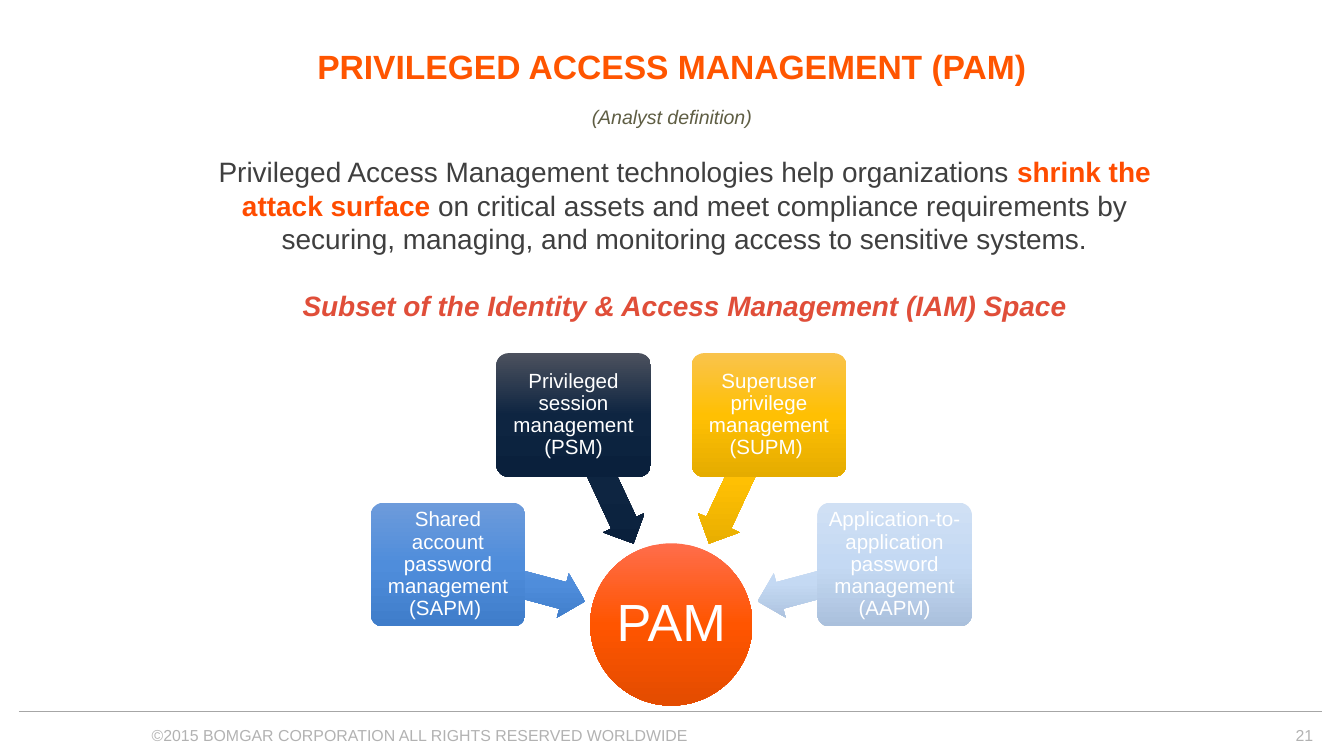
from copy import deepcopy
from math import cos, radians, sin

from lxml import etree
from pptx import Presentation
from pptx import util as u
from pptx.dml.color import RGBColor
from pptx.enum import shapes, text
from pptx.oxml.ns import qn

WIDTH = 10
HEIGHT = WIDTH * 9 / 16
FONT = "Arial"
WHITE = RGBColor(0xFF, 0xFF, 0xFF)
ORANGE = RGBColor(0xFF, 0x55, 0x00)
HOT_ORANGE = RGBColor(0xFF, 0x4C, 0x00)
RED = RGBColor(0xE0, 0x4E, 0x39)
OLIVE = RGBColor(0x5F, 0x5E, 0x44)
DARK_GREY = RGBColor(0x3F, 0x3F, 0x3F)
LIGHT_GREY = RGBColor(0xB2, 0xB2, 0xB2)
RULE_GREY = RGBColor(0xA6, 0xA6, 0xA6)

# Gradients: top, middle and bottom colour
HUB_SHADES = (RGBColor(0xFF, 0x6D, 0x4B), ORANGE, RGBColor(0xE3, 0x4C, 0x00))
BLUE_SHADES = (RGBColor(0x6D, 0x9B, 0xDB), RGBColor(0x4F, 0x8D, 0xDB), RGBColor(0x3F, 0x7D, 0xCA))
NAVY_SHADES = (RGBColor(0x4C, 0x51, 0x5E), RGBColor(0x0E, 0x25, 0x41), RGBColor(0x0A, 0x20, 0x3C))
GOLD_SHADES = (RGBColor(0xF9, 0xC3, 0x4C), RGBColor(0xFF, 0xC0, 0x03), RGBColor(0xE5, 0xAC, 0x00))
PALE_SHADES = (RGBColor(0xD0, 0xE0, 0xF4), RGBColor(0xC4, 0xD9, 0xF3), RGBColor(0xAA, 0xC0, 0xDC))

CARDS = [
    ("Shared account password management (SAPM) ", BLUE_SHADES),
    ("Privileged session management (PSM)", NAVY_SHADES),
    ("Superuser privilege management (SUPM) ", GOLD_SHADES),
    ("Application-to-application password management (AAPM)", PALE_SHADES),
]


def inches(*lengths):
    return [u.Inches(length) for length in lengths]


def set_margins(frame, left, top, right, bottom):
    frame.margin_left, frame.margin_top, frame.margin_right, frame.margin_bottom = inches(
        left, top, right, bottom)


def add_text(page, box, margins=(0.1, 0.05, 0.1, 0.05)):
    frame = page.shapes.add_textbox(*inches(*box)).text_frame
    frame.word_wrap = True
    set_margins(frame, *margins)
    return frame


def write(para, spans, size, align=text.PP_ALIGN.CENTER, spacing=0.9):
    """Fill a paragraph with spans of (words, colour, bold, italic)."""
    para.alignment = align
    para.line_spacing = spacing
    for words, color, bold, italic in spans:
        span = para.add_run()
        span.text = words
        font = span.font
        font.name, font.size = FONT, u.Pt(size)
        font.color.rgb, font.bold, font.italic = color, bold, italic


def add_shaded(page, kind, center, size, shades):
    """Add a shape around its centre, with a gradient from top to bottom."""
    left, top = center[0] - size[0] / 2, center[1] - size[1] / 2
    shape = page.shapes.add_shape(kind, *inches(left, top, *size))
    shape.shadow.inherit = False
    shape.line.fill.background()
    shape.fill.gradient()
    shape.fill.gradient_angle = 270
    gradient = shape._element.spPr.find(qn("a:gradFill"))
    gradient.set("rotWithShape", "0")
    stop_list = gradient.find(qn("a:gsLst"))
    stop_list.append(deepcopy(stop_list[0]))
    for index, (stop, shade) in enumerate(zip(shape.fill.gradient_stops, shades)):
        stop.position = index / 2
        stop.color.rgb = shade
    return shape


def label(shape, words, size):
    frame = shape.text_frame
    frame.word_wrap = True
    frame.vertical_anchor = text.MSO_ANCHOR.MIDDLE
    set_margins(frame, 0.02, 0.02, 0.02, 0.02)
    write(frame.paragraphs[0], [(words, WHITE, False, False)], size)


def add_heading(page, box):
    frame = add_text(page, box)
    write(frame.paragraphs[0], [("PRIVILEGED ACCESS MANAGEMENT (PAM)", ORANGE, True, False)], 18)
    para = frame.add_paragraph()
    para.space_before = u.Pt(11)
    write(para, [("(Analyst definition)", OLIVE, False, True)], 10.5)


def add_definition(page, box):
    frame = add_text(page, box, (0.26, 0.04, 0.07, 0.04))
    write(frame.paragraphs[0], [
        ("Privileged Access Management technologies help organizations ", DARK_GREY, False, False),
        ("shrink the attack surface", HOT_ORANGE, True, False),
        (" on critical assets and meet compliance requirements by securing, managing, "
         "and monitoring access to sensitive systems.", DARK_GREY, False, False),
    ], 15, spacing=1.0)
    para = frame.add_paragraph()
    para.space_before = u.Pt(18)
    write(para, [("Subset of the Identity & Access Management (IAM) Space", RED, True, True)],
          15, spacing=1.0)


def add_radial_diagram(page, box):
    left, top, width, height = box
    hub_size = 0.27 * width
    hub_center = (left + width / 2, top + height - hub_size / 2)

    def on_circle(radius, degrees):
        angle = radians(degrees)
        return hub_center[0] + radius * cos(angle), hub_center[1] + radius * sin(angle)

    # Hub
    hub = add_shaded(page, shapes.MSO_SHAPE.OVAL, hub_center, (hub_size, hub_size), HUB_SHADES)
    label(hub, "PAM", 28)

    # Cards on an arc, each with an arrow towards the hub
    for index, (words, shades) in enumerate(CARDS):
        degrees = 195 + 50 * index
        arrow = add_shaded(page, shapes.MSO_SHAPE.LEFT_ARROW, on_circle(1.19, degrees),
                           (1.05, 0.34), shades)
        arrow.adjustments[0], arrow.adjustments[1] = 0.6, 0.5
        arrow.rotation = degrees
        card = add_shaded(page, shapes.MSO_SHAPE.ROUNDED_RECTANGLE,
                          on_circle(1.72, degrees), (1.15, 0.92), shades)
        card.adjustments[0] = 0.1
        label(card, words, 11)


def add_footer(page, box):
    left, top, width, height = box
    rule = page.shapes.add_connector(shapes.MSO_CONNECTOR.STRAIGHT,
                                     *inches(left, top, left + width, top))
    rule.line.color.rgb = RULE_GREY
    rule.line.width = u.Pt(0.25)
    etree.SubElement(rule._element.spPr, qn("a:effectLst"))

    notice = add_text(page, (1.03, top, 6.93, height))
    write(notice.paragraphs[0],
          [("©2015 BOMGAR CORPORATION ALL RIGHTS RESERVED WORLDWIDE", LIGHT_GREY, False, False)],
          8.5, text.PP_ALIGN.LEFT, 1.4)
    number = add_text(page, (6.17, top, 3.7, height))
    write(number.paragraphs[0], [("21", LIGHT_GREY, False, False)],
          8.5, text.PP_ALIGN.RIGHT, 1.4)


def main():
    deck = Presentation()
    deck.slide_width, deck.slide_height = inches(WIDTH, HEIGHT)
    page = deck.slides.add_slide(deck.slide_layouts[6])
    add_footer(page, (0.14, 5.29, 9.7, 0.29))
    add_heading(page, (0.5, 0.33, 9, 0.5))
    add_radial_diagram(page, (2.76, 2.63, 4.47, 2.62))
    add_definition(page, (1.25, 1.11, 7.5, 1.34))
    deck.save("out.pptx")


if __name__ == "__main__":
    main()
